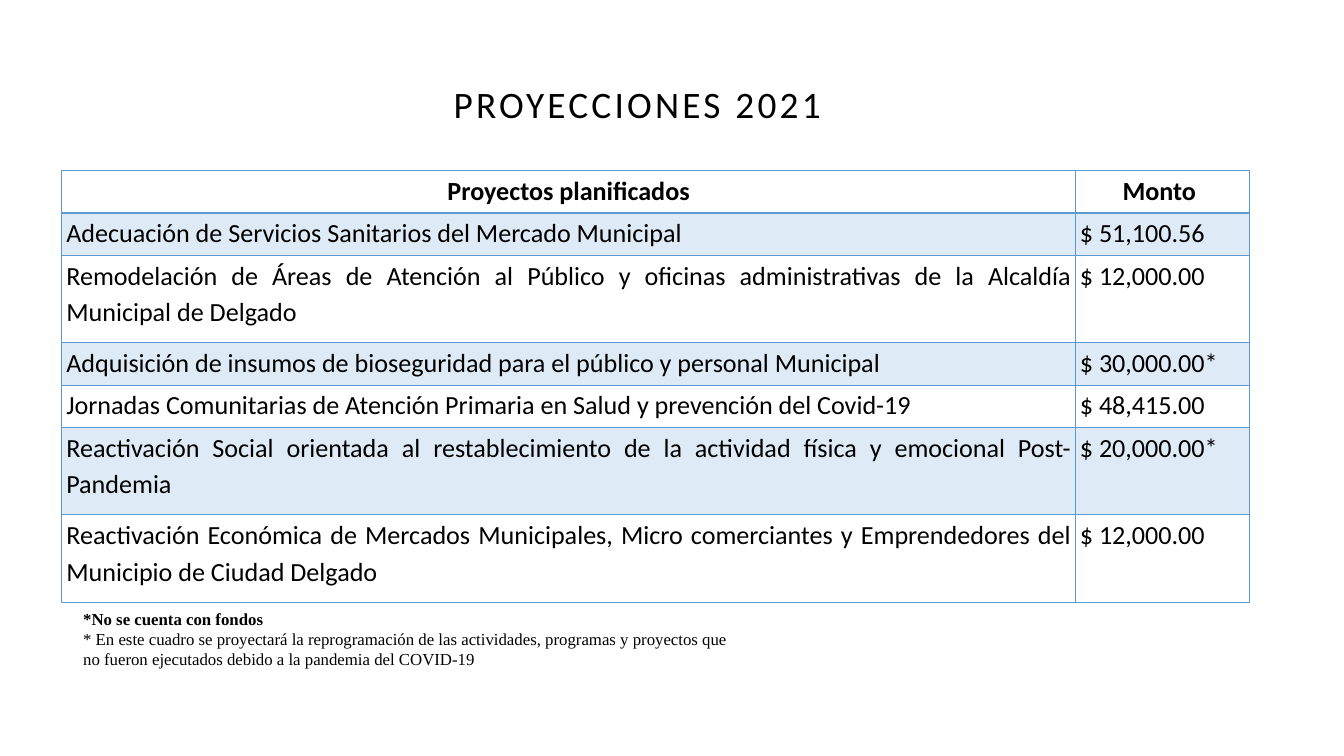
import dataclasses

import lxml.etree
import pptx
import pptx.dml.color
import pptx.enum.text
import pptx.oxml.ns
import pptx.util

Pt = pptx.util.Pt
qn = pptx.oxml.ns.qn
Align = pptx.enum.text.PP_ALIGN


@dataclasses.dataclass(frozen=True)
class Theme:
    ink: str = "000000"
    accent: str = "5B9BD5"
    band_alpha: int = 20
    title_size: int = 40
    table_size: int = 28
    note_size: int = 18
    sans: str = "Calibri"
    serif: str = "Times New Roman"


def write(para, text, *, font, size, color, bold=False, align=Align.LEFT,
          line=None, before=0, after=0, tracking=None):
    para.alignment = align
    para.line_spacing = line
    para.space_before, para.space_after = Pt(before), Pt(after)
    span = para.add_run()
    span.text = text
    span.font.name = font
    span.font.size = Pt(size)
    span.font.bold = bold
    span.font.color.rgb = pptx.dml.color.RGBColor.from_string(color)
    if tracking:
        span.font._element.set("spc", str(int(tracking * 100)))


class SlideBuilder:
    def __init__(self, slide, theme):
        self.slide = slide
        self.theme = theme

    def text(self, left, top, width, height, lines, insets=(7.2, 3.6, 7.2, 3.6)):
        box = self.slide.shapes.add_textbox(Pt(left), Pt(top), Pt(width), Pt(height))
        frame = box.text_frame
        frame.word_wrap = True
        frame.auto_size = pptx.enum.text.MSO_AUTO_SIZE.SHAPE_TO_FIT_TEXT
        self.insets(frame, insets)
        for index, (text, style) in enumerate(lines):
            para = frame.add_paragraph() if index else frame.paragraphs[0]
            write(para, text, color=self.theme.ink, **style)

    def insets(self, holder, insets):
        (holder.margin_left, holder.margin_top,
         holder.margin_right, holder.margin_bottom) = map(Pt, insets)

    def table(self, left, top, widths, heights, rows):
        table = self.slide.shapes.add_table(
            len(rows), len(widths), Pt(left), Pt(top),
            Pt(sum(widths)), Pt(sum(heights))).table
        table.first_row = table.horz_banding = False
        for column, width in zip(table.columns, widths):
            column.width = Pt(width)
        for row, height in zip(table.rows, heights):
            row.height = Pt(height)
        for row_index, values in enumerate(rows):
            for column_index, value in enumerate(values):
                self.cell(table.cell(row_index, column_index), value, row_index)

    def cell(self, cell, value, row_index):
        header = row_index == 0
        self.insets(cell, (4.9, 0, 4.9, 0))
        self.border(cell, "L", 1)
        self.border(cell, "R", 1)
        self.border(cell, "T", 2 if row_index == 1 else 1)
        self.border(cell, "B", 2 if header else 1)
        if row_index % 2:
            cell.fill.solid()
            cell.fill.fore_color.rgb = pptx.dml.color.RGBColor.from_string(self.theme.accent)
            color = cell._tc.tcPr.find(qn("a:solidFill"))[0]
            lxml.etree.SubElement(color, qn("a:alpha"), val=str(self.theme.band_alpha * 1000))
        else:
            cell.fill.background()
        write(cell.text_frame.paragraphs[0], value, font=self.theme.sans,
              size=self.theme.table_size, color=self.theme.ink, bold=header,
              align=Align.CENTER if header else Align.JUSTIFY,
              line=1.15, before=6, after=6)

    def border(self, cell, side, width):
        line = lxml.etree.SubElement(
            cell._tc.get_or_add_tcPr(), qn("a:ln" + side), w=str(Pt(width)))
        fill = lxml.etree.SubElement(line, qn("a:solidFill"))
        lxml.etree.SubElement(fill, qn("a:srgbClr"), val=self.theme.accent)


PROJECTS = [
    ("Proyectos planificados", "Monto "),
    ("Adecuación de Servicios Sanitarios del Mercado Municipal", "$ 51,100.56"),
    ("Remodelación de Áreas de Atención al Público y oficinas administrativas "
     "de la Alcaldía Municipal de Delgado", "$ 12,000.00"),
    ("Adquisición de insumos de bioseguridad para el público y personal Municipal",
     "$ 30,000.00*"),
    ("Jornadas Comunitarias de Atención Primaria en Salud y prevención del Covid-19 ",
     "$ 48,415.00"),
    ("Reactivación Social orientada al restablecimiento de la actividad física "
     "y emocional Post-Pandemia", "$ 20,000.00*"),
    ("Reactivación Económica de Mercados Municipales, Micro comerciantes y "
     "Emprendedores del Municipio de Ciudad Delgado", "$ 12,000.00"),
]


def main():
    deck = pptx.Presentation()
    deck.slide_width, deck.slide_height = Pt(1440), Pt(810)
    theme = Theme()
    page = SlideBuilder(deck.slides.add_slide(deck.slide_layouts[6]), theme)

    title = dict(font=theme.sans, size=theme.title_size, line=Pt(48),
                 before=8.1, tracking=3.5)
    page.text(486, 78.5, 596, 57, [("PROYECCIONES 2021", title)], (0, 8, 0, 0))

    short, tall = 45.4, 93.6
    page.table(66.2, 182.9, (1086, 186),
               (short, short, tall, short, short, tall, tall), PROJECTS)

    note = dict(font=theme.serif, size=theme.note_size)
    page.text(82, 645, 720, 76, [
        ("*No se cuenta con fondos",
         dict(note, bold=True, align=Align.JUSTIFY, line=1.15)),
        ("* En este cuadro se proyectará la reprogramación de las actividades, "
         "programas y proyectos que no fueron ejecutados debido a la pandemia "
         "del COVID-19", note),
    ])
    deck.save("out.pptx")


if __name__ == "__main__":
    main()
